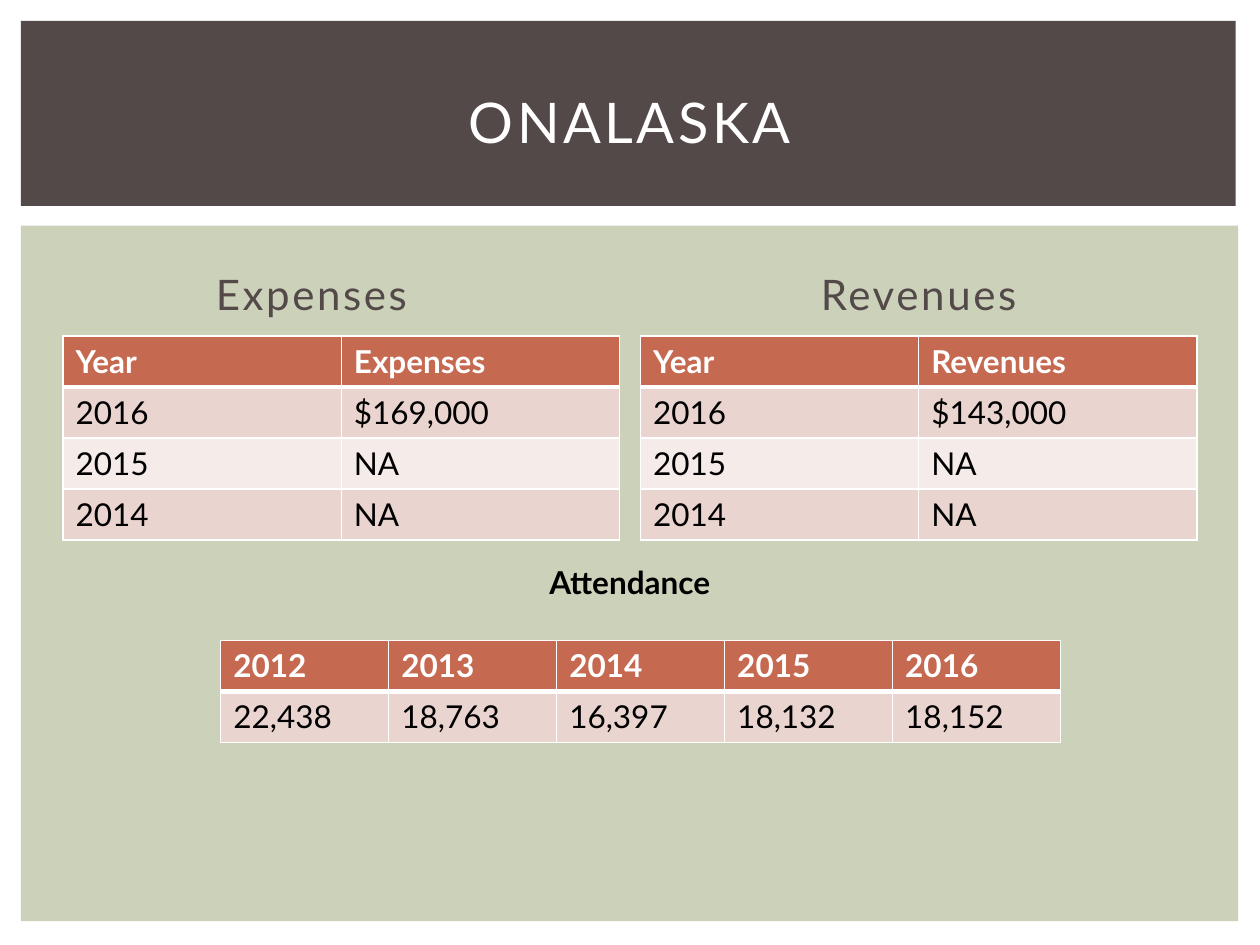
from lxml import etree
from pptx import Presentation
from pptx.dml.color import RGBColor
from pptx.enum import shapes, text
from pptx.oxml import ns
from pptx.util import Cm, Pt

COLORS = {
    "white": "FFFFFF",
    "black": "000000",
    "brown": "534949",
    "sage": "CCD1B9",
    "rust": "C66951",
    "band_dark": "EAD4D0",
    "band_light": "F5EBE9",
}
FONT = "Lato"
ROW_HEIGHT = 1.03
PANEL_WIDTH = 11.22
PANELS = [
    (1.27, "Expenses", "$169,000", 1.45),
    (12.91, "Revenues", "$143,000", 0.25),
]
ATTENDANCE = [
    ("2012", "2013", "2014", "2015", "2016"),
    ("22,438", "18,763", "16,397", "18,132", "18,152"),
]


def rgb(name):
    """Return the named palette colour."""
    return RGBColor.from_string(COLORS[name])


def add_run(paragraph, wording, size, color, bold=False, spacing=0):
    """Add one formatted run, with letter spacing in points."""
    run = paragraph.add_run()
    run.text = wording
    run.font.name = FONT
    run.font.size = Pt(size)
    run.font.bold = bold
    run.font.color.rgb = rgb(color)
    if spacing:
        run.font._element.set("spc", str(int(spacing * 100)))


def add_band(slide, left, top, width, height, color):
    """Add a plain background rectangle."""
    band = slide.shapes.add_shape(
        shapes.MSO_SHAPE.RECTANGLE, Cm(left), Cm(top), Cm(width), Cm(height)
    )
    band.shadow.inherit = False
    band.fill.solid()
    band.fill.fore_color.rgb = rgb(color)
    band.line.fill.background()


def set_title(slide, wording):
    """Place the title above the bands and write it."""
    title = slide.shapes.title
    title.element.getparent().append(title.element)
    title.left, title.top = Cm(1.06), Cm(0.99)
    title.width, title.height = Cm(23.28), Cm(2.92)
    title.text_frame.vertical_anchor = text.MSO_ANCHOR.MIDDLE
    paragraph = title.text_frame.paragraphs[0]
    paragraph.alignment = text.PP_ALIGN.CENTER
    add_run(paragraph, wording, 32, "white", spacing=2)


def add_label(slide, left, top, width, height, wording, size, color,
              bold=False, spacing=0, margin_right=0.25,
              anchor=text.MSO_ANCHOR.TOP):
    """Add a centred text box."""
    label = slide.shapes.add_textbox(Cm(left), Cm(top), Cm(width), Cm(height))
    frame = label.text_frame
    frame.word_wrap = True
    frame.vertical_anchor = anchor
    frame.margin_right = Cm(margin_right)
    paragraph = frame.paragraphs[0]
    paragraph.alignment = text.PP_ALIGN.CENTER
    add_run(paragraph, wording, size, color, bold, spacing)


def set_borders(cell, top, bottom):
    """Draw white cell borders, with top and bottom widths in points."""
    properties = cell._tc.get_or_add_tcPr()
    for side, width in (("L", 1), ("R", 1), ("T", top), ("B", bottom)):
        line = etree.SubElement(properties, ns.qn(f"a:ln{side}"), w=str(Pt(width)))
        fill = etree.SubElement(line, ns.qn("a:solidFill"))
        etree.SubElement(fill, ns.qn("a:srgbClr"), val=COLORS["white"])


def add_banded_table(slide, left, top, width, rows):
    """Add a table with a rust header and alternating body rows."""
    table = slide.shapes.add_table(
        len(rows), len(rows[0]), Cm(left), Cm(top),
        Cm(width), Cm(ROW_HEIGHT * len(rows))
    ).table
    for r, values in enumerate(rows):
        header = r == 0
        table.rows[r].height = Cm(ROW_HEIGHT)
        band = "rust" if header else "band_dark" if r % 2 else "band_light"
        for c, value in enumerate(values):
            cell = table.cell(r, c)
            set_borders(cell, 3 if r == 1 else 1, 3 if header else 1)
            cell.fill.solid()
            cell.fill.fore_color.rgb = rgb(band)
            add_run(cell.text_frame.paragraphs[0], value, 18,
                    "white" if header else "black", header)


def add_panel(slide, left, heading, amount, margin_right):
    """Add a heading with its yearly table."""
    add_label(slide, left, 4.78, PANEL_WIDTH, 1.78, heading, 24, "brown",
              spacing=1.5, margin_right=margin_right,
              anchor=text.MSO_ANCHOR.BOTTOM)
    rows = [("Year", heading), ("2016", amount), ("2015", "NA"), ("2014", "NA")]
    add_banded_table(slide, left, 6.77, PANEL_WIDTH, rows)


def main():
    """Build and save the slide."""
    deck = Presentation()
    deck.slide_width, deck.slide_height = Cm(25.4), Cm(19.05)
    slide = deck.slides.add_slide(deck.slide_layouts[5])
    add_band(slide, 0.42, 4.55, 24.54, 14.02, "sage")
    add_band(slide, 0.42, 0.42, 24.49, 3.73, "brown")
    for panel in PANELS:
        add_panel(slide, *panel)
    set_title(slide, "ONALASKA")
    add_label(slide, 9.31, 11.22, 6.77, 1.03, "Attendance", 18, "black", bold=True)
    add_banded_table(slide, 4.45, 12.91, 16.93, ATTENDANCE)
    deck.save("out.pptx")


if __name__ == "__main__":
    main()
